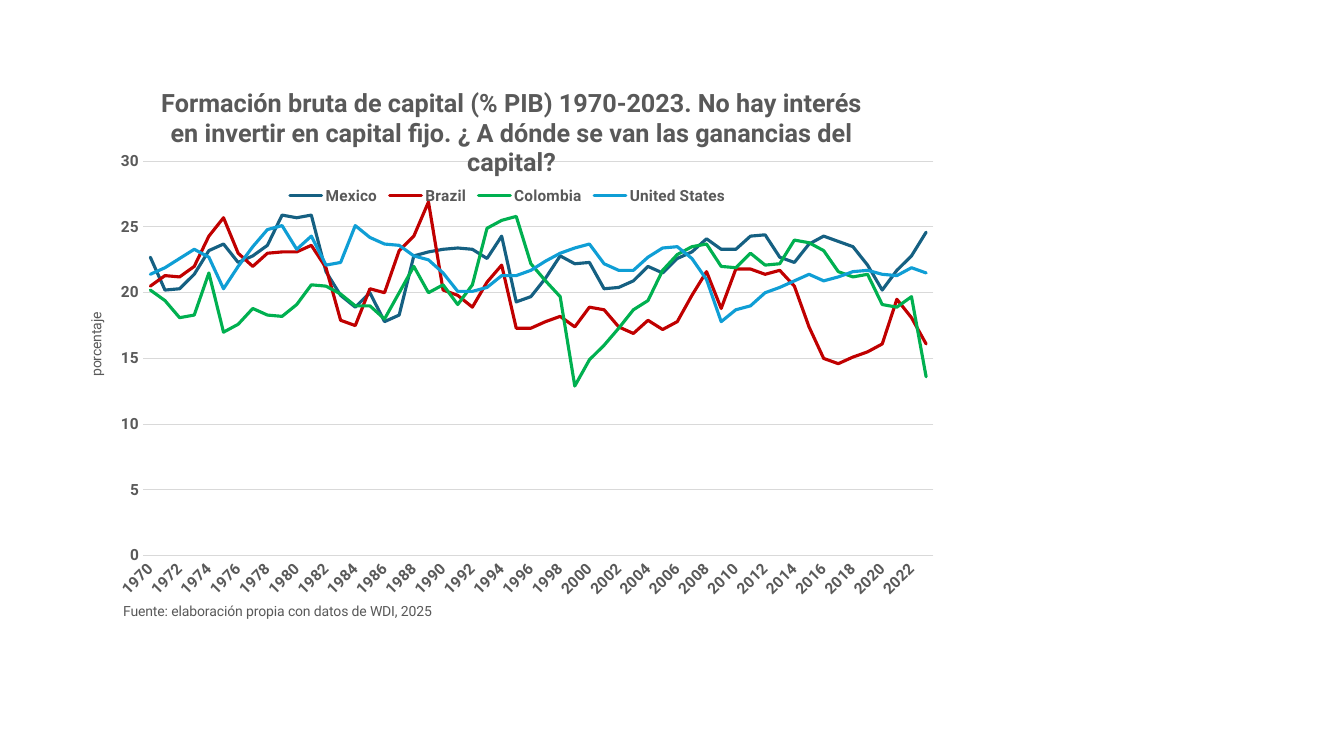
from dataclasses import dataclass

from lxml import etree
from pptx import Presentation
from pptx.chart.data import CategoryChartData
from pptx.dml.color import RGBColor
from pptx.enum.chart import XL_CHART_TYPE, XL_LEGEND_POSITION, XL_MARKER_STYLE, XL_TICK_MARK
from pptx.util import Inches, Pt

LINE = XL_CHART_TYPE.LINE
TOP = XL_LEGEND_POSITION.TOP
NO_MARK = XL_MARKER_STYLE.NONE
NO_TICK = XL_TICK_MARK.NONE
NS = "http://schemas.openxmlformats.org/drawingml/2006/chart"


@dataclass(frozen=True)
class Theme:
    font: str = "Roboto"
    text: str = "595959"
    grid: str = "D9D9D9"
    head: float = 18
    label: float = 11
    note: float = 10
    thin: float = 0.75
    thick: float = 2.25


@dataclass(frozen=True)
class Country:
    name: str
    color: str
    values: tuple[float, ...]


THEME = Theme()
YEARS = range(1970, 2024)
HEAD = ("Formación bruta de capital (% PIB) 1970-2023. No hay interés en invertir "
        "en capital fijo. ¿ A dónde se van las ganancias del capital?")

COUNTRIES = (
    Country("Mexico", "156082", (
        22.7, 20.2, 20.3, 21.4, 23.2, 23.7, 22.3, 22.8, 23.6, 25.9, 25.7, 25.9, 21.6, 19.8,
        18.9, 20, 17.8, 18.3, 22.8, 23.1, 23.3, 23.4, 23.3, 22.6, 24.3, 19.3, 19.7, 21.1,
        22.8, 22.2, 22.3, 20.3, 20.4, 20.9, 22, 21.5, 22.6, 23.1, 24.1, 23.3, 23.3, 24.3,
        24.4, 22.7, 22.3, 23.7, 24.3, 23.9, 23.5, 22.1, 20.2, 21.7, 22.8, 24.6)),
    Country("Brazil", "C00000", (
        20.5, 21.3, 21.2, 22, 24.3, 25.7, 23, 22, 23, 23.1, 23.1, 23.6, 21.9, 17.9,
        17.5, 20.3, 20, 23.2, 24.3, 26.9, 20.2, 19.8, 18.9, 20.8, 22.1, 17.3, 17.3, 17.8,
        18.2, 17.4, 18.9, 18.7, 17.4, 16.9, 17.9, 17.2, 17.8, 19.8, 21.6, 18.8, 21.8, 21.8,
        21.4, 21.7, 20.5, 17.4, 15, 14.6, 15.1, 15.5, 16.1, 19.5, 18.1, 16.1)),
    Country("Colombia", "00B050", (
        20.2, 19.4, 18.1, 18.3, 21.5, 17, 17.6, 18.8, 18.3, 18.2, 19.1, 20.6, 20.5, 19.9,
        19, 19, 18, 20, 22, 20, 20.6, 19.1, 20.6, 24.9, 25.5, 25.8, 22.2, 20.9,
        19.7, 12.9, 14.9, 16, 17.3, 18.7, 19.4, 21.7, 22.9, 23.5, 23.7, 22, 21.9, 23,
        22.1, 22.2, 24, 23.8, 23.2, 21.6, 21.2, 21.4, 19.1, 18.9, 19.7, 13.6)),
    Country("United States", "0F9ED5", (
        21.4, 21.9, 22.6, 23.3, 22.7, 20.3, 22, 23.5, 24.8, 25.1, 23.3, 24.3, 22.1, 22.3,
        25.1, 24.2, 23.7, 23.6, 22.8, 22.5, 21.5, 20.1, 20.1, 20.4, 21.3, 21.3, 21.7, 22.4,
        23, 23.4, 23.7, 22.2, 21.7, 21.7, 22.7, 23.4, 23.5, 22.6, 21, 17.8, 18.7, 19,
        20, 20.4, 20.9, 21.4, 20.9, 21.2, 21.6, 21.7, 21.4, 21.3, 21.9, 21.5)),
)


def style(font, size: float, bold: bool) -> None:
    font.name = THEME.font
    font.size = Pt(size)
    font.bold = bold
    font.color.rgb = RGBColor.from_string(THEME.text)


def stroke(line, color: str, width: float) -> None:
    line.color.rgb = RGBColor.from_string(color)
    line.width = Pt(width)


def place(part, index: int, inner: bool = False, **box: float) -> None:
    """Set a manual layout, in fractions of the chart area."""
    layout = part.find(f"{{{NS}}}layout")
    if layout is None:
        layout = etree.Element(f"{{{NS}}}layout")
        part.insert(index, layout)
    manual = etree.SubElement(layout, f"{{{NS}}}manualLayout")
    rules = {"layoutTarget": "inner"} if inner else {}
    rules |= {"xMode": "edge", "yMode": "edge"} | box
    for tag, value in rules.items():
        etree.SubElement(manual, f"{{{NS}}}{tag}").set("val", str(value))


def add_title(title, text: str, size: float, bold: bool, x: float, y: float, turn: int = 0) -> None:
    frame = title.text_frame
    run = frame.paragraphs[0].add_run()
    run.text = text
    style(run.font, size, bold)
    body = frame._txBody.bodyPr
    body.set("rot", str(turn * 60000))
    body.set("vert", "horz")
    place(title._element, 1, x=x, y=y)


def add_chart(slide) -> None:
    data = CategoryChartData(number_format="0.0")
    data.categories = [str(year) for year in YEARS]
    for country in COUNTRIES:
        data.add_series(country.name, country.values)
    frame = slide.shapes.add_chart(
        LINE, Inches(0.57), Inches(0.59), Inches(8.93), Inches(5.64), data)
    chart = frame.chart
    style(chart.font, THEME.note, False)
    chart.plots[0].vary_by_categories = False
    place(chart._chartSpace.chart.plotArea, 0, inner=True, x=0.095, y=0.179, w=0.878, h=0.694)

    # Country lines
    for series, country in zip(chart.plots[0].series, COUNTRIES):
        series.smooth = False
        series.marker.style = NO_MARK
        stroke(series.format.line, country.color, THEME.thick)
        series.format.line._get_or_add_ln().set("cap", "rnd")

    # Axes
    years, share = chart.category_axis, chart.value_axis
    for axis in (years, share):
        axis.major_tick_mark = axis.minor_tick_mark = NO_TICK
        style(axis.tick_labels.font, THEME.label, True)
    stroke(years.format.line, THEME.grid, THEME.thin)
    years._element.txPr.bodyPr.set("rot", str(-45 * 60000))
    skip = etree.Element(f"{{{NS}}}tickLblSkip")
    skip.set("val", "2")
    years._element.find(f"{{{NS}}}noMultiLvlLbl").addprevious(skip)
    share.minimum_scale, share.maximum_scale, share.major_unit = 0, 30, 5
    share.tick_labels.number_format = "0"
    share.tick_labels.number_format_is_linked = False
    share.format.line.fill.background()
    share.has_major_gridlines = True
    stroke(share.major_gridlines.format.line, THEME.grid, THEME.thin)

    # Titles and source note
    chart.has_title = True
    add_title(chart.chart_title, HEAD, THEME.head, True, 0.11, 0.04)
    add_title(years.axis_title, "Fuente: elaboración propia con datos de WDI, 2025",
              THEME.note, False, 0.07, 0.95)
    add_title(share.axis_title, "porcentaje", THEME.note, False, 0.03, 0.44, -90)

    # Legend
    chart.has_legend = True
    chart.legend.position = TOP
    chart.legend.include_in_layout = False
    style(chart.legend.font, THEME.label, True)
    place(chart.legend._element, 1, x=0.25, y=0.22, w=0.5, h=0.04)


def main() -> None:
    deck = Presentation()
    deck.slide_width, deck.slide_height = Inches(13.33), Inches(7.5)
    add_chart(deck.slides.add_slide(deck.slide_layouts[6]))
    deck.save("out.pptx")


if __name__ == "__main__":
    main()
